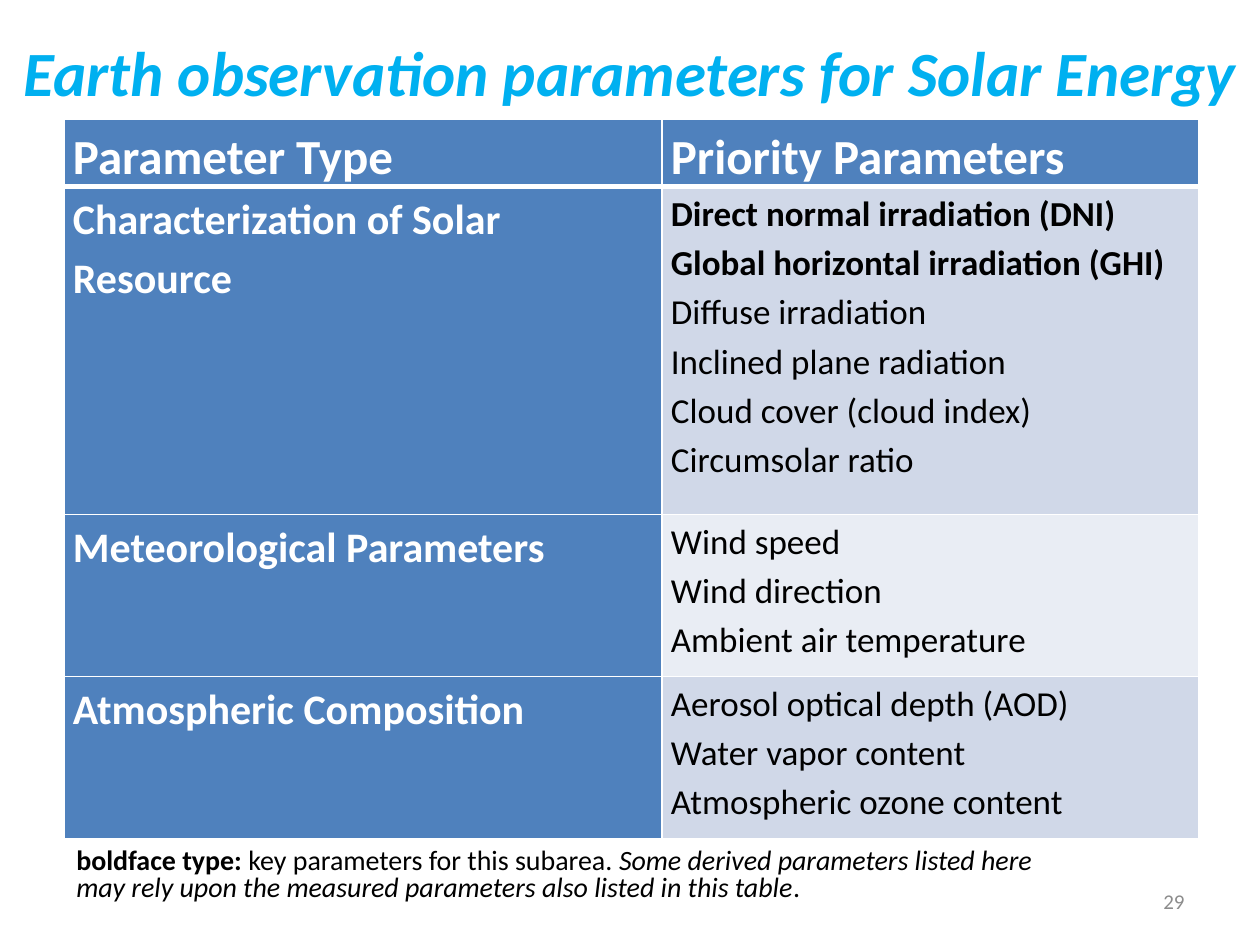
from dataclasses import dataclass

from lxml.etree import SubElement
from pptx import Presentation
from pptx.dml.color import RGBColor
from pptx.enum.text import MSO_ANCHOR as Anchor, PP_ALIGN as Align
from pptx.oxml.ns import qn
from pptx.util import Pt

EMU_PER_PX = 914400 / 126


def px(length):
    return round(length * EMU_PER_PX)


@dataclass(frozen=True)
class Theme:
    font: str = "Calibri"
    title: str = "00B0F0"
    ink: str = "000000"
    muted: str = "8C8C8C"
    white: str = "FFFFFF"
    heading: str = "4F81BD"
    bands: tuple = ("D0D8E8", "E9EDF4")
    title_size: int = 36
    header_size: int = 28
    label_size: int = 24
    item_size: int = 20
    note_size: int = 16
    number_size: int = 12


class SlideBuilder:
    def __init__(self, page, theme):
        self.page = page
        self.theme = theme

    def fill_para(self, para, spans, size, color, spacing=None, align=Align.LEFT):
        """Fill a paragraph with (text, font format) spans; a newline breaks the line."""
        para.alignment = align
        para.line_spacing = spacing
        for text, style in spans:
            for index, line in enumerate(text.split("\n")):
                if index:
                    para.add_line_break()
                run = para.add_run()
                run.text = line
                formats = {"name": self.theme.font, "size": Pt(size), "bold": False, **style}
                for name, value in formats.items():
                    setattr(run.font, name, value)
                run.font.color.rgb = RGBColor.from_string(color)

    def text(self, area, spans, size, color, anchor=Anchor.MIDDLE, **layout):
        box = self.page.shapes.add_textbox(*map(px, area))
        box.text_frame.word_wrap = True
        box.text_frame.vertical_anchor = anchor
        self.fill_para(box.text_frame.paragraphs[0], spans, size, color, **layout)

    def borders(self, cell, widths):
        """Draw white cell borders; widths gives points for each side."""
        properties = cell._tc.get_or_add_tcPr()
        for index, (side, width) in enumerate(widths.items()):
            line = SubElement(properties, qn(f"a:ln{side}"), w=str(Pt(width)))
            fill = SubElement(line, qn("a:solidFill"))
            SubElement(fill, qn("a:srgbClr"), val=self.theme.white)
            properties.remove(line)
            properties.insert(index, line)

    def cell(self, cell, lines, size, color, fill, widths):
        """Fill one table cell with (text, bold) lines."""
        margins = {"margin_left": 9, "margin_right": 9, "margin_top": 0, "margin_bottom": 0}
        for name, value in margins.items():
            setattr(cell, name, px(value))
        cell.fill.solid()
        cell.fill.fore_color.rgb = RGBColor.from_string(fill)
        self.borders(cell, widths)
        frame = cell.text_frame
        for index, (text, bold) in enumerate(lines):
            para = frame.add_paragraph() if index else frame.paragraphs[0]
            self.fill_para(para, [(text, {"bold": bold})], size, color, spacing=1.15)

    def table(self, area, columns, heights, header, groups):
        theme = self.theme
        grid = self.page.shapes.add_table(len(heights), len(columns), *map(px, area)).table
        for column, width in zip(grid.columns, columns):
            column.width = px(width)
        for row, height in zip(grid.rows, heights):
            row.height = px(height)
        thin = dict.fromkeys("LRTB", 1)
        for index, text in enumerate(header):
            self.cell(grid.cell(0, index), [(text, True)], theme.header_size,
                      theme.white, theme.heading, {**thin, "B": 3})
        for index, (label, items) in enumerate(groups, 1):
            widths = {**thin, "T": 3 if index == 1 else 1}
            band = theme.bands[(index - 1) % len(theme.bands)]
            self.cell(grid.cell(index, 0), [(label, True)], theme.label_size,
                      theme.white, theme.heading, widths)
            self.cell(grid.cell(index, 1), items, theme.item_size, theme.ink, band, widths)


PARAMETERS = [
    ("Characterization of Solar Resource", [
        ("Direct normal irradiation (DNI)", True),
        ("Global horizontal irradiation (GHI)", True),
        ("Diffuse irradiation", False),
        ("Inclined plane radiation", False),
        ("Cloud cover (cloud index)", False),
        ("Circumsolar ratio", False),
    ]),
    ("Meteorological Parameters", [
        ("Wind speed", False),
        ("Wind direction", False),
        ("Ambient air temperature", False),
    ]),
    ("Atmospheric Composition", [
        ("Aerosol optical depth (AOD)", False),
        ("Water vapor content", False),
        ("Atmospheric ozone content", False),
    ]),
]

NOTE = [
    ("boldface type: ", {"bold": True}),
    ("key parameters for this subarea. ", {}),
    ("Some derived parameters listed here\n"
     "may rely upon the measured parameters also listed in this table", {"italic": True}),
    (".", {}),
]


def main():
    deck = Presentation()
    deck.slide_width, deck.slide_height = px(1260), px(945)
    theme = Theme()
    slide = SlideBuilder(deck.slides.add_slide(deck.slide_layouts[6]), theme)

    slide.text((903, 876, 294, 50), [("29", {})], theme.number_size, theme.muted,
               align=Align.RIGHT)
    slide.text((0, 22, 1260, 98),
               [("Earth observation parameters for Solar Energy", {"bold": True, "italic": True})],
               theme.title_size, theme.title, align=Align.CENTER)
    slide.text((64, 843, 1133, 68), NOTE, theme.note_size, theme.ink,
               anchor=Anchor.TOP, spacing=0.8)
    slide.table((64, 119, 1135, 719), (598, 537), (52, 328, 162, 162),
                ("Parameter Type", "Priority Parameters"), PARAMETERS)
    deck.save("out.pptx")


if __name__ == "__main__":
    main()
